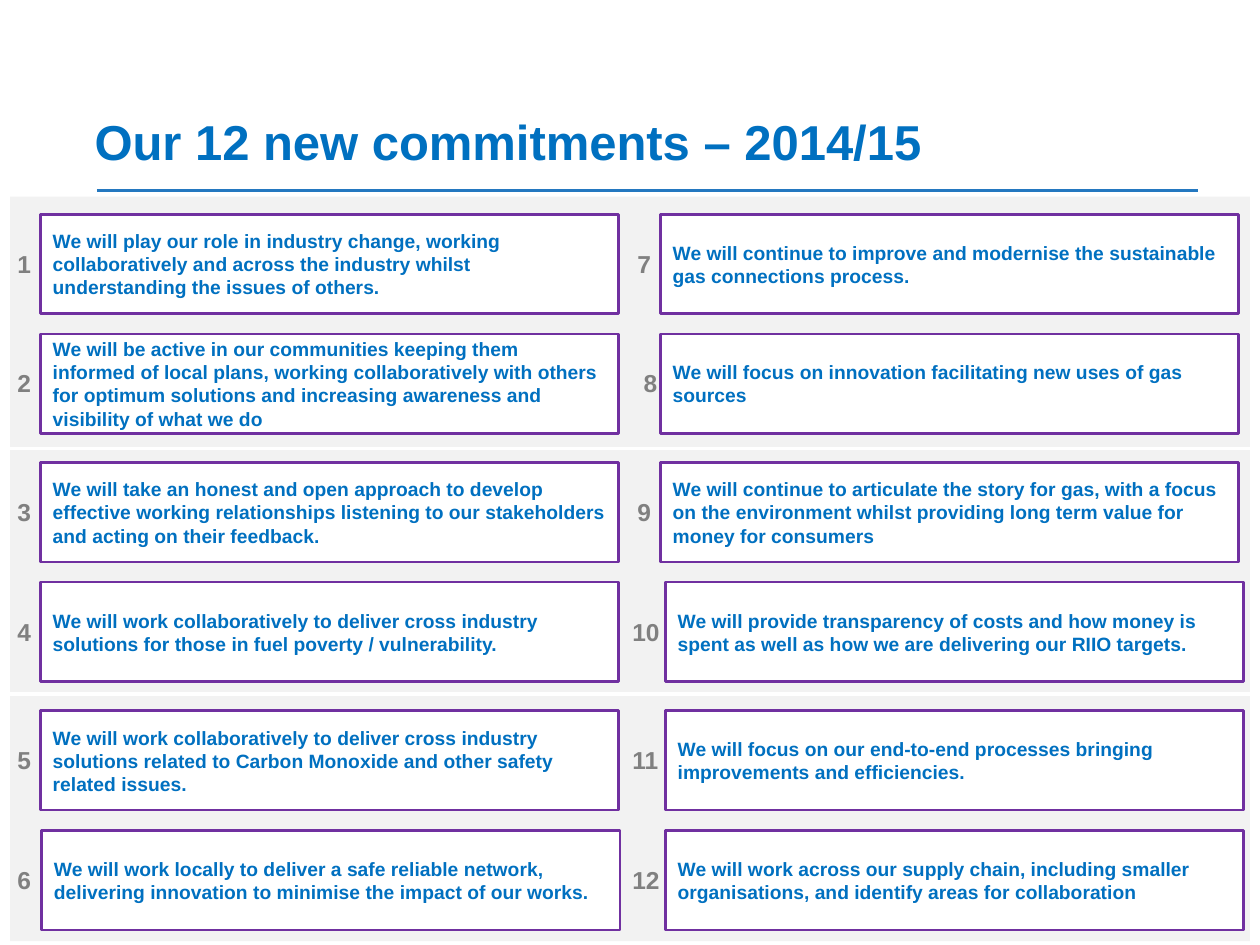
from dataclasses import dataclass

from lxml.etree import SubElement
from pptx import Presentation
from pptx.dml.color import RGBColor
from pptx.enum.shapes import MSO_CONNECTOR as Connector, MSO_SHAPE as Shape
from pptx.enum.text import MSO_ANCHOR as Anchor, MSO_AUTO_SIZE as AutoSize, PP_ALIGN as Align
from pptx.oxml.ns import qn
from pptx.slide import Slide
from pptx.text.text import TextFrame
from pptx.util import Inches, Pt


@dataclass(frozen=True)
class Theme:
    font: str = "Arial"
    blue: str = "0070C0"
    rule: str = "2478C0"
    purple: str = "7030A0"
    grey: str = "808080"
    panel: str = "F2F2F2"
    white: str = "FFFFFF"
    title_size: float = 28
    number_size: float = 14
    body_size: float = 11
    outline: float = 1.5
    divider: float = 2


@dataclass(frozen=True)
class Commitment:
    number: int
    text: str
    box_left: float = 0.32
    number_left: float = 0.04


THEME = Theme()
BOX_WIDTH, BOX_HEIGHT = 4.59, 0.79
NUMBER_HEIGHT = 0.34
FIRST_TOP, BAND_PITCH, ROW_PITCH = 1.7, 1.97, 0.95
ROWS = 6

COMMITMENTS = [
    Commitment(1, "We will play our role in industry change, working collaboratively "
                  "and across the industry whilst understanding the issues of others."),
    Commitment(2, "We will be active in our communities keeping them informed of local "
                  "plans, working collaboratively with others for optimum solutions and "
                  "increasing awareness and visibility of what we do"),
    Commitment(3, "We will take an honest and open approach to develop effective working "
                  "relationships listening to our stakeholders and acting on their feedback."),
    Commitment(4, "We will work collaboratively to deliver cross industry solutions for "
                  "those in fuel poverty / vulnerability."),
    Commitment(5, "We will work collaboratively to deliver cross industry solutions related "
                  "to Carbon Monoxide and other safety related issues."),
    Commitment(6, "We will work locally to deliver a safe reliable network, delivering "
                  "innovation to minimise the impact of our works.", 0.33),
    Commitment(7, "We will continue to improve and modernise the sustainable gas "
                  "connections process.", 5.24, 4.96),
    Commitment(8, "We will focus on innovation facilitating new uses of gas sources",
               5.24, 5.01),
    Commitment(9, "We will continue to articulate the story for gas, with a focus on the "
                  "environment whilst providing long term value for money for consumers",
               5.24, 4.96),
    Commitment(10, "We will provide transparency of costs and how money is spent as well as "
                   "how we are delivering our RIIO targets.", 5.28, 4.92),
    Commitment(11, "We will focus on our end-to-end processes bringing improvements and "
                   "efficiencies.", 5.28, 4.92),
    Commitment(12, "We will work across our supply chain, including smaller organisations, "
                   "and identify areas for collaboration", 5.28, 4.92),
]


def colour(value: str) -> RGBColor:
    return RGBColor.from_string(value)


def write(frame: TextFrame, text: str, size: float, text_colour: str) -> None:
    para = frame.paragraphs[0]
    para.alignment = Align.LEFT
    span = para.add_run()
    span.text = text
    span.font.name = THEME.font
    span.font.size = Pt(size)
    span.font.bold = True
    span.font.color.rgb = colour(text_colour)


def add_line(page: Slide, left: float, right: float, top: float,
             line_colour: str, width: float) -> None:
    line = page.shapes.add_connector(
        Connector.STRAIGHT, Inches(left), Inches(top), Inches(right), Inches(top))
    line.line.color.rgb = colour(line_colour)
    line.line.width = Pt(width)
    SubElement(line._element.spPr, qn("a:effectLst"))


def add_panel(page: Slide) -> None:
    panel = page.shapes.add_shape(
        Shape.RECTANGLE, Inches(0.08), Inches(1.56), Inches(9.84), Inches(5.91))
    panel.shadow.inherit = False
    panel.fill.solid()
    panel.fill.fore_color.rgb = colour(THEME.panel)
    panel.line.fill.background()


def add_title(page: Slide, text: str) -> None:
    title = page.shapes.title
    title.left, title.top = Inches(0.65), Inches(0.83)
    title.width, title.height = Inches(8.85), Inches(0.57)
    frame = title.text_frame
    frame.vertical_anchor = Anchor.BOTTOM
    frame.auto_size = AutoSize.SHAPE_TO_FIT_TEXT
    write(frame, text, THEME.title_size, THEME.blue)


def add_commitment(page: Slide, item: Commitment) -> None:
    band, row = divmod((item.number - 1) % ROWS, 2)
    top = FIRST_TOP + band * BAND_PITCH + row * ROW_PITCH

    box = page.shapes.add_shape(
        Shape.RECTANGLE, Inches(item.box_left), Inches(top),
        Inches(BOX_WIDTH), Inches(BOX_HEIGHT))
    box.shadow.inherit = False
    box.fill.solid()
    box.fill.fore_color.rgb = colour(THEME.white)
    box.line.color.rgb = colour(THEME.purple)
    box.line.width = Pt(THEME.outline)
    box.text_frame.word_wrap = True
    box.text_frame.vertical_anchor = Anchor.MIDDLE
    write(box.text_frame, item.text, THEME.body_size, THEME.blue)

    width = 0.31 if item.number < 10 else 0.42
    number_top = top + (BOX_HEIGHT - NUMBER_HEIGHT) / 2
    label = page.shapes.add_textbox(
        Inches(item.number_left), Inches(number_top), Inches(width), Inches(NUMBER_HEIGHT))
    label.text_frame.word_wrap = False
    label.text_frame.auto_size = AutoSize.SHAPE_TO_FIT_TEXT
    write(label.text_frame, str(item.number), THEME.number_size, THEME.grey)


def main() -> None:
    deck = Presentation()
    deck.slide_width, deck.slide_height = Inches(10), Inches(7.5)
    page = deck.slides.add_slide(deck.slide_layouts[5])

    add_line(page, 0.77, 9.51, 1.51, THEME.rule, THEME.outline)
    add_panel(page)
    add_title(page, "Our 12 new commitments – 2014/15")
    for top in (3.56, 5.51):
        add_line(page, 0.08, 9.93, top, THEME.white, THEME.divider)
    for item in COMMITMENTS:
        add_commitment(page, item)

    deck.save("out.pptx")


if __name__ == "__main__":
    main()
